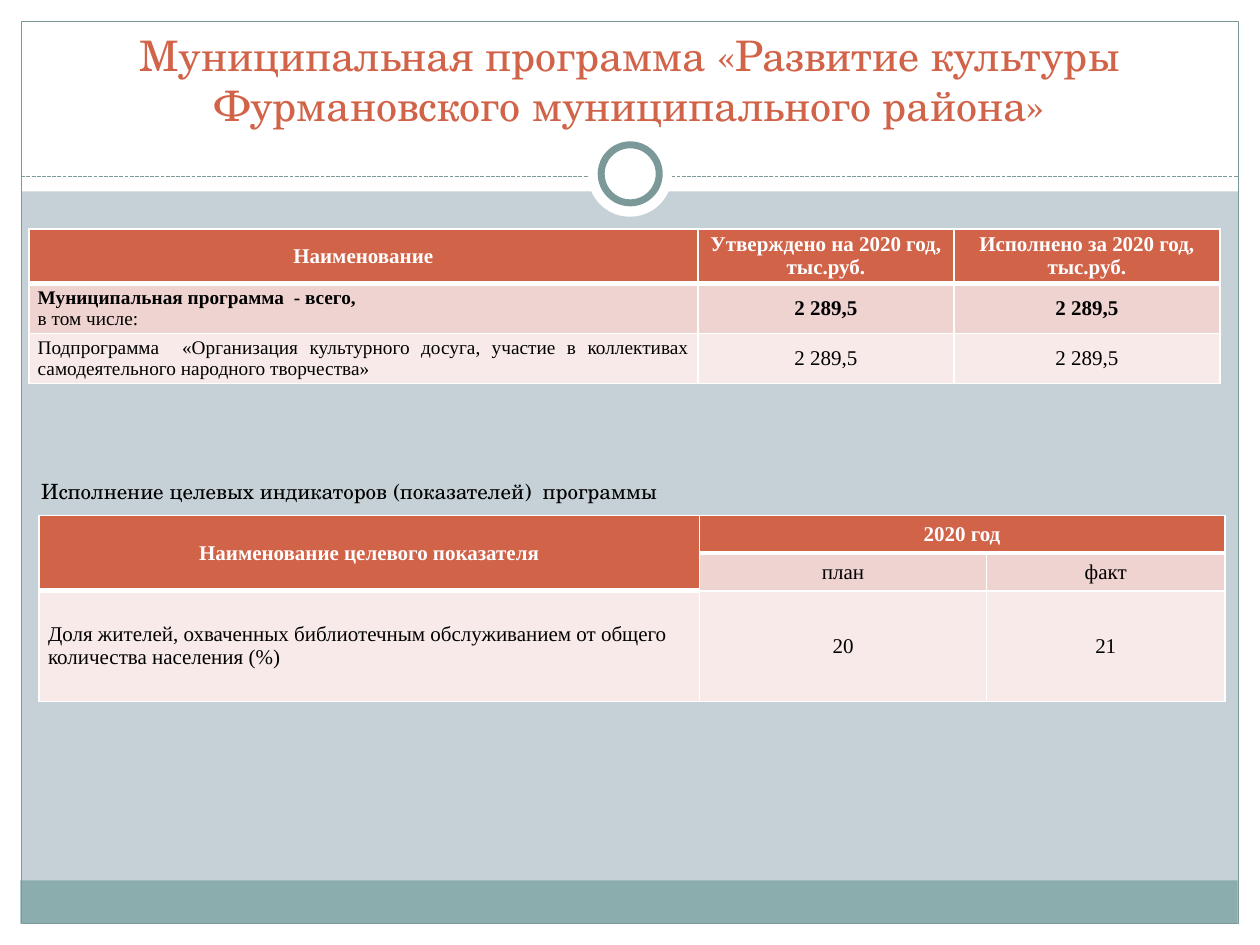
"""Build the slide on the municipal culture programme with its two tables."""
import dataclasses
import typing

import lxml.etree
import pptx
import pptx.dml.color
import pptx.enum.dml
import pptx.enum.shapes
import pptx.enum.text
import pptx.oxml.ns
import pptx.util

Cm = pptx.util.Cm
Pt = pptx.util.Pt
Align = pptx.enum.text.PP_ALIGN
Middle = pptx.enum.text.MSO_ANCHOR.MIDDLE
Preset = pptx.enum.shapes.MSO_SHAPE


@dataclasses.dataclass(frozen=True)
class Theme:
    backdrop: str = "C5D1D7"
    white: str = "FFFFFF"
    black: str = "000000"
    accent: str = "D16349"
    teal: str = "8CADAE"
    outline: str = "7C999A"
    strong_row: str = "EED3D0"
    pale_row: str = "F7EAE9"
    display: str = "TeX Gyre Schola"
    body: str = "Times New Roman"
    title_size: float = 24
    text_size: float = 12
    small_size: float = 11
    thin: float = 1
    thick: float = 3


THEME = Theme()


class Box(typing.NamedTuple):
    left: float
    top: float
    width: float
    height: float

    def lengths(self) -> list[pptx.util.Length]:
        return [Cm(value) for value in self]


@dataclasses.dataclass(frozen=True)
class Panel:
    box: Box
    fill: str | None = None
    line: str | None = None
    weight: float = 0.75
    preset: typing.Any = Preset.RECTANGLE


@dataclasses.dataclass(frozen=True)
class Words:
    text: str
    size: float = THEME.text_size
    color: str = THEME.black
    bold: bool = False
    font: str = THEME.body


@dataclasses.dataclass(frozen=True)
class Entry:
    row: int
    column: int
    lines: tuple[Words, ...]
    fill: str
    align: typing.Any = Align.CENTER
    rows: int = 1
    columns: int = 1


@dataclasses.dataclass(frozen=True)
class Grid:
    left: float
    top: float
    widths: tuple[float, ...]
    heights: tuple[float, ...]
    entries: tuple[Entry, ...]


def heading(row: int, column: int, text: str, rows: int = 1, columns: int = 1) -> Entry:
    words = Words(text, color=THEME.white, bold=True)
    return Entry(row, column, (words,), THEME.accent, rows=rows, columns=columns)


def figure(row: int, column: int, text: str, fill: str, bold: bool = False) -> Entry:
    return Entry(row, column, (Words(text, bold=bold),), fill)


FRAME_PANELS = (
    Panel(Box(0, 18.62, 25.4, 0.43), THEME.white),
    Panel(Box(0, 0, 25.4, 3.86), THEME.white),
    Panel(Box(0, 0, 0.43, 19.05), THEME.white),
    Panel(Box(24.97, 0, 0.43, 19.05), THEME.white),
    Panel(Box(0.41, 17.75, 24.54, 0.87), THEME.teal),
    Panel(Box(0.43, 0.43, 24.54, 18.19), line=THEME.outline),
)
RING_PANELS = (
    Panel(Box(11.85, 2.67, 1.7, 1.7), THEME.white, preset=Preset.OVAL),
    Panel(Box(12.12, 2.92, 1.17, 1.17), THEME.white, THEME.outline, 4, Preset.OVAL),
)
BUDGET = Grid(
    0.58, 4.62, (13.49, 5.16, 5.36), (1.09, 1.01, 1.01),
    (
        heading(0, 0, "Наименование"),
        heading(0, 1, "Утверждено на 2020 год, тыс.руб."),
        heading(0, 2, "Исполнено за 2020 год, тыс.руб."),
        Entry(1, 0, (
            Words("Муниципальная программа  - всего, ", THEME.small_size, bold=True),
            Words("в том числе:", THEME.small_size),
        ), THEME.strong_row, Align.JUSTIFY),
        figure(1, 1, "2 289,5", THEME.strong_row, True),
        figure(1, 2, "2 289,5", THEME.strong_row, True),
        Entry(2, 0, (Words(
            "Подпрограмма  «Организация культурного досуга, участие в коллективах "
            "самодеятельного народного творчества»", THEME.small_size),),
            THEME.pale_row, Align.JUSTIFY),
        figure(2, 1, "2 289,5", THEME.pale_row),
        figure(2, 2, "2 289,5", THEME.pale_row),
    ),
)
INDICATORS = Grid(
    0.79, 10.39, (13.31, 5.79, 4.8), (0.76, 0.76, 2.23),
    (
        heading(0, 0, "Наименование целевого показателя", rows=2),
        heading(0, 1, "2020 год", columns=2),
        figure(1, 1, "план", THEME.strong_row),
        figure(1, 2, "факт", THEME.strong_row),
        Entry(2, 0, (Words(
            "Доля жителей, охваченных библиотечным обслуживанием от общего "
            "количества населения (%)"),), THEME.pale_row, Align.LEFT),
        figure(2, 1, "20", THEME.pale_row),
        figure(2, 2, "21", THEME.pale_row),
    ),
)


def rgb(code: str) -> pptx.dml.color.RGBColor:
    return pptx.dml.color.RGBColor.from_string(code)


def paint(fill: typing.Any, code: str) -> None:
    fill.solid()
    fill.fore_color.rgb = rgb(code)


def write(frame: typing.Any, lines: tuple[Words, ...], align: typing.Any) -> None:
    for index, words in enumerate(lines):
        paragraph = frame.add_paragraph() if index else frame.paragraphs[0]
        paragraph.alignment = align
        run = paragraph.add_run()
        run.text = words.text
        run.font.name = words.font
        run.font.size = Pt(words.size)
        run.font.bold = words.bold
        run.font.color.rgb = rgb(words.color)


def draw_panel(slide: typing.Any, panel: Panel) -> None:
    shape = slide.shapes.add_shape(panel.preset, *panel.box.lengths())
    shape.shadow.inherit = False
    if panel.fill:
        paint(shape.fill, panel.fill)
    else:
        shape.fill.background()
    if panel.line:
        paint(shape.line.fill, panel.line)
        shape.line.width = Pt(panel.weight)
    else:
        shape.line.fill.background()


def draw_divider(slide: typing.Any) -> None:
    divider = slide.shapes.add_connector(
        pptx.enum.shapes.MSO_CONNECTOR.STRAIGHT, Cm(0.43), Cm(3.56), Cm(24.97), Cm(3.56))
    paint(divider.line.fill, THEME.outline)
    divider.line.width = Pt(0.75)
    divider.line.dash_style = pptx.enum.dml.MSO_LINE.SQUARE_DOT
    properties = divider._element.spPr
    lxml.etree.SubElement(properties, pptx.oxml.ns.qn("a:effectLst"))


def draw_borders(cell: typing.Any, entry: Entry) -> None:
    qn = pptx.oxml.ns.qn
    properties = cell._tc.get_or_add_tcPr()
    bottom = THEME.thick if entry.fill == THEME.accent else THEME.thin
    weights = {"L": THEME.thin, "R": THEME.thin, "T": THEME.thin, "B": bottom}
    if entry.row:
        del weights["T"]
    for side, weight in weights.items():
        edge = lxml.etree.SubElement(properties, qn(f"a:ln{side}"), w=str(Pt(weight)))
        solid = lxml.etree.SubElement(edge, qn("a:solidFill"))
        lxml.etree.SubElement(solid, qn("a:srgbClr"), val=THEME.white)


def draw_table(slide: typing.Any, grid: Grid) -> None:
    box = Box(grid.left, grid.top, sum(grid.widths), sum(grid.heights))
    table = slide.shapes.add_table(
        len(grid.heights), len(grid.widths), *box.lengths()).table
    for column, width in zip(table.columns, grid.widths):
        column.width = Cm(width)
    for row, height in zip(table.rows, grid.heights):
        row.height = Cm(height)
    for entry in grid.entries:
        cell = table.cell(entry.row, entry.column)
        if entry.rows * entry.columns > 1:
            cell.merge(table.cell(
                entry.row + entry.rows - 1, entry.column + entry.columns - 1))
        for row in range(entry.row, entry.row + entry.rows):
            for column in range(entry.column, entry.column + entry.columns):
                covered = table.cell(row, column)
                draw_borders(covered, entry)
                paint(covered.fill, entry.fill)
        cell.vertical_anchor = Middle
        cell.margin_left = cell.margin_right = Cm(0.18)
        cell.margin_top = cell.margin_bottom = 0
        write(cell.text_frame, entry.lines, entry.align)


def draw_title(slide: typing.Any) -> None:
    title = slide.shapes.title
    title.left, title.top, title.width, title.height = Box(0.84, 0.64, 23.7, 2.11).lengths()
    frame = title.text_frame
    frame.word_wrap = True
    frame.auto_size = pptx.enum.text.MSO_AUTO_SIZE.NONE
    frame.vertical_anchor = pptx.enum.text.MSO_ANCHOR.BOTTOM
    write(frame, (Words(
        "Муниципальная программа «Развитие культуры Фурмановского муниципального района»",
        THEME.title_size, THEME.accent, font=THEME.display),), Align.CENTER)
    slide.shapes._spTree.append(title._element)


def draw_caption(slide: typing.Any) -> None:
    caption = slide.shapes.add_textbox(*Box(0.58, 9.53, 17.27, 1.27).lengths())
    caption.text_frame.word_wrap = True
    write(caption.text_frame, (Words(
        "Исполнение целевых индикаторов (показателей)  программы",
        font=THEME.display),), Align.LEFT)


def main() -> None:
    deck = pptx.Presentation()
    deck.slide_width, deck.slide_height = Cm(25.4), Cm(19.05)
    slide = deck.slides.add_slide(deck.slide_layouts.get_by_name("Title Only"))
    paint(slide.background.fill, THEME.backdrop)
    for panel in FRAME_PANELS:
        draw_panel(slide, panel)
    draw_divider(slide)
    for panel in RING_PANELS:
        draw_panel(slide, panel)
    draw_title(slide)
    draw_caption(slide)
    for grid in (BUDGET, INDICATORS):
        draw_table(slide, grid)
    deck.save("out.pptx")


if __name__ == "__main__":
    main()
